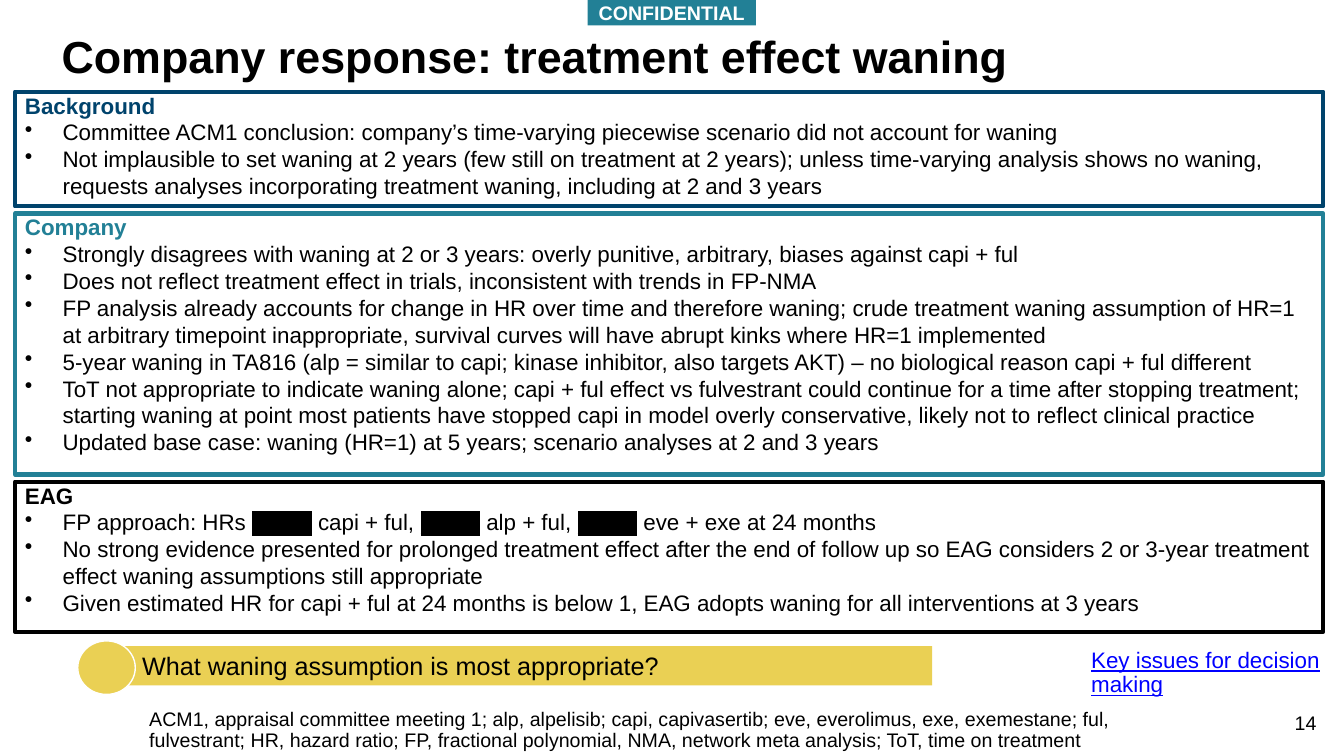
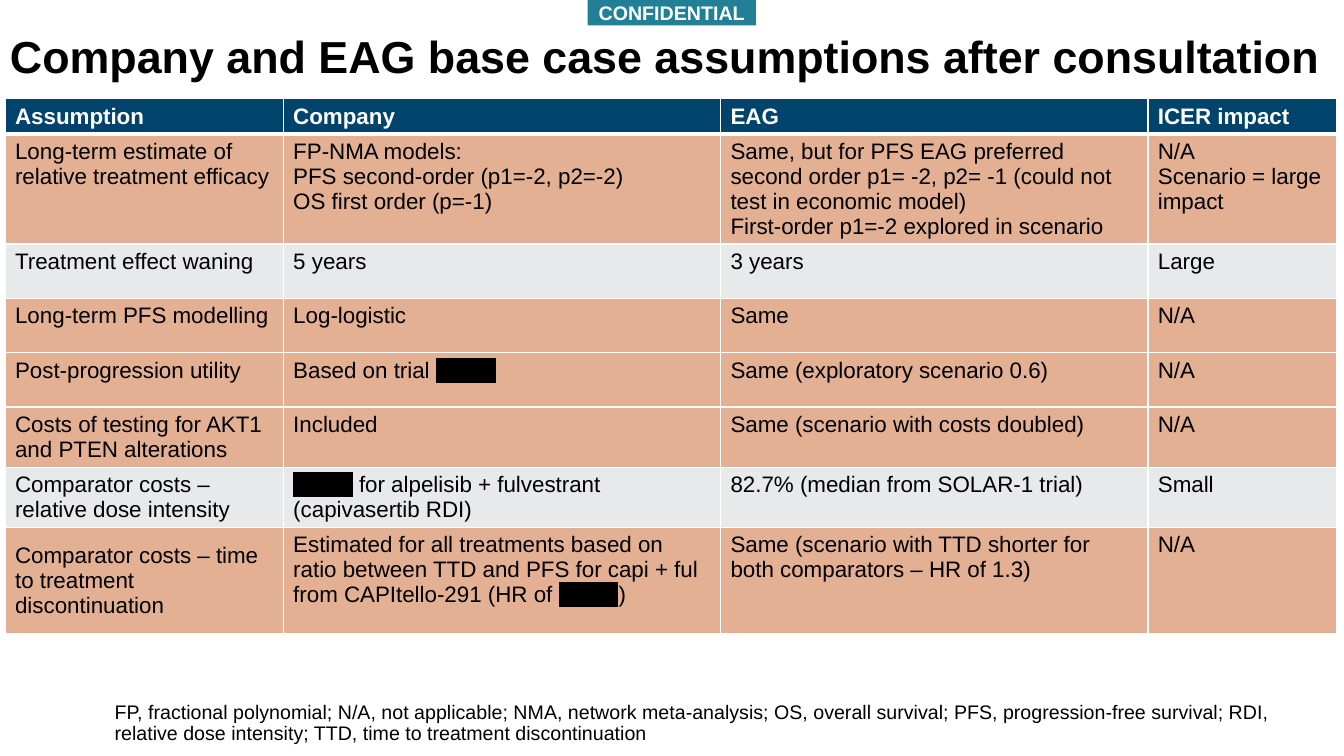
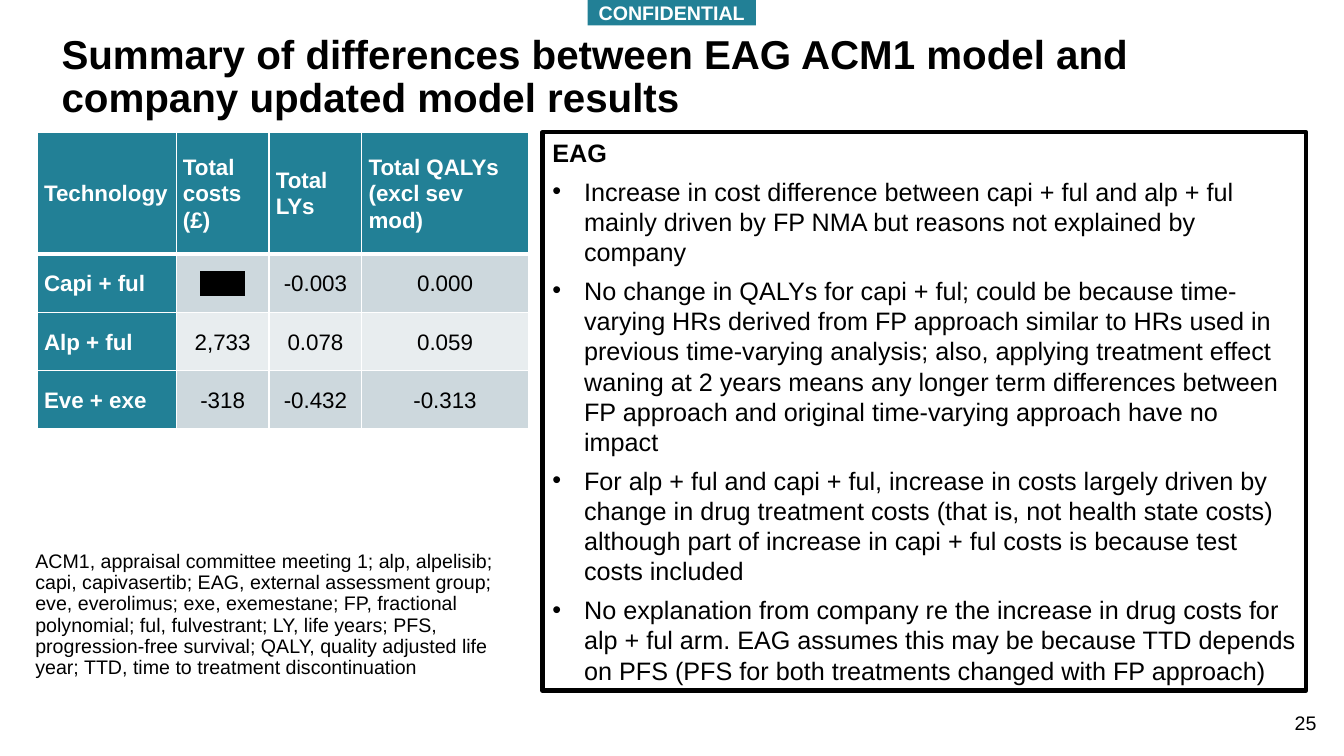
"""Build three committee slides on treatment effect waning and base cases."""
from lxml import etree
from pptx import Presentation
from pptx.dml.color import RGBColor
from pptx.enum import shapes, text
from pptx.oxml import ns
from pptx.util import Cm, Pt

NAVY, TEAL, GOLD, BLACK, WHITE = "00436C", "228096", "EAD054", "000000", "FFFFFF"
ORANGE, GREY, BAND_DARK, BAND_LIGHT = "E3B094", "E7E9EB", "CDD8DD", "E8EDEF"
LEFT, CENTER, RIGHT = text.PP_ALIGN.LEFT, text.PP_ALIGN.CENTER, text.PP_ALIGN.RIGHT
TOP, MIDDLE = text.MSO_ANCHOR.TOP, text.MSO_ANCHOR.MIDDLE
RECTANGLE, OVAL = shapes.MSO_SHAPE.RECTANGLE, shapes.MSO_SHAPE.OVAL
rgb = RGBColor.from_string


def place(shape, box, fill=None, line=None, weight=3, anchor=TOP, inset=0.25, pad=0.13):
    """Set the position, fill, outline and text margins of a shape."""
    shape.left, shape.top, shape.width, shape.height = map(Cm, box)
    shape.shadow.inherit = False
    if fill:
        shape.fill.solid()
        shape.fill.fore_color.rgb = rgb(fill)
    else:
        shape.fill.background()
    if line:
        shape.line.color.rgb = rgb(line)
        shape.line.width = Pt(weight)
    else:
        shape.line.fill.background()
    frame = shape.text_frame
    frame.word_wrap = True
    frame.auto_size = text.MSO_AUTO_SIZE.NONE
    frame.vertical_anchor = anchor
    frame.margin_left, frame.margin_right = Cm(inset), Cm(0.25)
    frame.margin_top = frame.margin_bottom = Cm(pad)
    return frame


def write(frame, lines, size=16, color=BLACK, bold=False, align=LEFT, spacing=1.0,
          gap=0, indent=0, heading=None, underline=None):
    """Write paragraphs; text between bars is blacked out, a heading has no bullet."""
    for index, line in enumerate(lines):
        para = frame.add_paragraph() if index else frame.paragraphs[0]
        is_heading = bool(heading) and index == 0
        hang = 0 if is_heading else indent
        para.alignment = align
        para.line_spacing = spacing
        para.space_before = Pt(gap if index else 0)
        props = para._p.get_or_add_pPr()
        props.set("marL", str(Cm(hang)))
        props.set("indent", str(-Cm(hang)))
        if hang:
            etree.SubElement(props, ns.qn("a:buChar")).set("char", "•")
        else:
            etree.SubElement(props, ns.qn("a:buNone"))
        para.font.name = "Arial"
        para.font.size = Pt(size)
        para.font.bold = bold or is_heading
        para.font.underline = underline
        para.font.color.rgb = rgb(heading if is_heading else color)
        for part, words in enumerate(line.split("|")):
            if not words:
                continue
            span = para.add_run()
            span.text = words
            if part % 2:
                span.font.underline = True
                mark = etree.SubElement(span._r.get_or_add_rPr(), ns.qn("a:highlight"))
                etree.SubElement(mark, ns.qn("a:srgbClr")).set("val", BLACK)


deck = Presentation()
deck.slide_width, deck.slide_height = Cm(33.87), Cm(19.05)

outlines = [
    (1, "Company response: treatment effect waning", 32, 1.3, 31.24, "14",
     (3.51, 17.75, 26.92, 1.3),
     "ACM1, appraisal committee meeting 1; alp, alpelisib; capi, capivasertib; eve, everolimus, "
     "exe, exemestane; ful, fulvestrant; HR, hazard ratio; FP, fractional polynomial, NMA, "
     "network meta analysis; ToT, time on treatment"),
    (1, "Company and EAG base case assumptions after consultation", 32, 0, 33.87, None,
     (2.64, 17.58, 30.96, 1.47),
     "FP, fractional polynomial; N/A, not applicable; NMA, network meta-analysis; OS, overall "
     "survival; PFS, progression-free survival; RDI, relative dose intensity; TTD, time to "
     "treatment discontinuation"),
    (3, "Summary of differences between EAG ACM1 model and company updated model results",
     28.8, 1.3, 31.24, "25", (0.64, 13.77, 12.37, 5),
     "ACM1, appraisal committee meeting 1; alp, alpelisib; capi, capivasertib; EAG, external "
     "assessment group; eve, everolimus; exe, exemestane; FP, fractional polynomial; ful, "
     "fulvestrant; LY, life years; PFS, progression-free survival; QALY, quality adjusted life "
     "year; TTD, time to treatment discontinuation"),
]
pages = []
for layout, title, size, left, width, number, note_box, note in outlines:
    page = deck.slides.add_slide(deck.slide_layouts[layout])
    pages.append(page)
    write(place(page.shapes.title, (left, 0.74, width, 1.65)), [title], size, bold=True,
          spacing=0.9)
    write(place(page.placeholders[1], note_box), [note], 14, spacing=0.9)
    banner = page.shapes.add_shape(RECTANGLE, 0, 0, 0, 0)
    write(place(banner, (14.81, 0, 4.24, 0.64), TEAL, anchor=MIDDLE, pad=0),
          ["CONFIDENTIAL"], 14, WHITE, True, CENTER)
    if number:
        corner = page.shapes.add_textbox(0, 0, 0, 0)
        write(place(corner, (32.13, 17.78, 1.3, 1.02)), [number], 14, align=RIGHT)
response, assumptions, differences = pages

panels = [
    (NAVY, 2.89, [
        "Background",
        "Committee ACM1 conclusion: company’s time-varying piecewise scenario did not account "
        "for waning",
        "Not implausible to set waning at 2 years (few still on treatment at 2 years); unless "
        "time-varying analysis shows no waning, requests analyses incorporating treatment "
        "waning, including at 2 and 3 years"]),
    (TEAL, 6.58, [
        "Company",
        "Strongly disagrees with waning at 2 or 3 years: overly punitive, arbitrary, biases "
        "against capi + ful",
        "Does not reflect treatment effect in trials, inconsistent with trends in FP-NMA",
        "FP analysis already accounts for change in HR over time and therefore waning; crude "
        "treatment waning assumption of HR=1 at arbitrary timepoint inappropriate, survival "
        "curves will have abrupt kinks where HR=1 implemented",
        "5-year waning in TA816 (alp = similar to capi; kinase inhibitor, also targets AKT) – "
        "no biological reason capi + ful different",
        "ToT not appropriate to indicate waning alone; capi + ful effect vs fulvestrant could "
        "continue for a time after stopping treatment; starting waning at point most patients "
        "have stopped capi in model overly conservative, likely not to reflect clinical practice",
        "Updated base case: waning (HR=1) at 5 years; scenario analyses at 2 and 3 years"]),
    (BLACK, 3.78, [
        "EAG",
        "FP approach: HRs |XXXX| capi + ful, |XXXX| alp + ful, |XXXX| eve + exe at 24 months",
        "No strong evidence presented for prolonged treatment effect after the end of follow up "
        "so EAG considers 2 or 3-year treatment effect waning assumptions still appropriate",
        "Given estimated HR for capi + ful at 24 months is below 1, EAG adopts waning for all "
        "interventions at 3 years"]),
]
top = 2.31
for color, height, lines in panels:
    panel = response.shapes.add_shape(RECTANGLE, 0, 0, 0, 0)
    write(place(panel, (0.38, top, 32.97, height), line=color, pad=0), lines, indent=0.95,
          heading=color)
    top += height + 0.18

question = response.shapes.add_shape(RECTANGLE, 0, 0, 0, 0)
write(place(question, (2.87, 16.28, 20.62, 0.99), GOLD, anchor=MIDDLE, inset=0.71),
      ["What waning assumption is most appropriate?"], 18)
place(response.shapes.add_shape(OVAL, 0, 0, 0, 0), (1.96, 16.15, 1.45, 1.35), GOLD, WHITE, 1)
key_issues = response.shapes.add_textbox(0, 0, 0, 0)
write(place(key_issues, (27.25, 16.23, 6.6, 1.57)), ["Key issues for decision making"],
      color="0000FF", spacing=0.9, underline=True)

write(place(differences.placeholders[2], (13.67, 3.33, 19.25, 14.07), line=BLACK), [
    "EAG",
    "Increase in cost difference between capi + ful and alp + ful mainly driven by FP NMA but "
    "reasons not explained by company",
    "No change in QALYs for capi + ful; could be because time-varying HRs derived from FP "
    "approach similar to HRs used in previous time-varying analysis; also, applying treatment "
    "effect waning at 2 years means any longer term differences between FP approach and "
    "original time-varying approach have no impact",
    "For alp + ful and capi + ful, increase in costs largely driven by change in drug treatment "
    "costs (that is, not health state costs) although part of increase in capi + ful costs is "
    "because test costs included",
    "No explanation from company re the increase in drug costs for alp + ful arm. EAG assumes "
    "this may be because TTD depends on PFS (PFS for both treatments changed with FP approach)",
], 18, gap=6, indent=0.8, heading=BLACK)

assumption_rows = [
    ["Assumption", "Company", "EAG", "ICER impact"],
    ["Long-term estimate of relative treatment efficacy",
     "FP-NMA models:\nPFS second-order (p1=-2, p2=-2)\nOS first order (p=-1)",
     "Same, but for PFS EAG preferred second order p1= -2, p2= -1 (could not test in economic "
     "model)\nFirst-order p1=-2 explored in scenario",
     "N/A\nScenario = large impact"],
    ["Treatment effect waning", "5 years", "3 years", "Large"],
    ["Long-term PFS modelling", "Log-logistic", "Same", "N/A"],
    ["Post-progression utility", "Based on trial |XXXX|", "Same (exploratory scenario 0.6)",
     "N/A"],
    ["Costs of testing for AKT1 and PTEN alterations", "Included",
     "Same (scenario with costs doubled)", "N/A"],
    ["Comparator costs – relative dose intensity",
     "|XXXX| for alpelisib + fulvestrant (capivasertib RDI)",
     "82.7% (median from SOLAR-1 trial)", "Small"],
    ["Comparator costs – time to treatment discontinuation",
     "Estimated for all treatments based on ratio between TTD and PFS for capi + ful from "
     "CAPItello-291 (HR of |XXXX|)",
     "Same (scenario with TTD shorter for both comparators – HR of 1.3)", "N/A"],
]
result_rows = [
    ["Technology", "Total costs (£)", "Total LYs", "Total QALYs (excl sev mod)"],
    ["Capi + ful", "|XXX|", "-0.003", "0.000"],
    ["Alp + ful", "2,733", "0.078", "0.059"],
    ["Eve + exe", "-318", "-0.432", "-0.313"],
]
tables = [
    (assumptions, 0.13, 2.49, [7.01, 11.02, 10.77, 4.75],
     [0.84, 1.9, 1.37, 1.37, 1.37, 1.45, 1.45, 2.69], assumption_rows,
     [NAVY, ORANGE, GREY, ORANGE, ORANGE, ORANGE, GREY, ORANGE], False),
    (differences, 0.94, 3.33, [3.5, 2.34, 2.34, 4.19], [3.07, 1.47, 1.47, 1.47], result_rows,
     [TEAL, BAND_DARK, BAND_LIGHT, BAND_DARK], True),
]
for page, left, top, widths, heights, rows, fills, is_result in tables:
    grid = page.shapes.add_table(len(rows), len(widths), Cm(left), Cm(top),
                                 Cm(sum(widths)), Cm(sum(heights))).table
    grid.horz_banding = False
    for column, width in zip(grid.columns, widths):
        column.width = Cm(width)
    for row, height in zip(grid.rows, heights):
        row.height = Cm(height)
    for r, entries in enumerate(rows):
        for c, entry in enumerate(entries):
            cell = grid.cell(r, c)
            is_head = r == 0 or (is_result and c == 0)
            is_middle = is_result or (c == 0 and r >= 5)
            cell.vertical_anchor = MIDDLE if is_middle else TOP
            cell.margin_left = cell.margin_right = Cm(0.17 if is_result else 0.25)
            cell.margin_top = cell.margin_bottom = Cm(0 if is_result else 0.13)
            props = cell._tc.get_or_add_tcPr()
            for side in "LRTB":
                thick = (r, side) in [(0, "B"), (1, "T")]
                edge = etree.SubElement(props, ns.qn("a:ln" + side))
                edge.set("w", str(Pt(3 if thick else 1)))
                paint = etree.SubElement(edge, ns.qn("a:solidFill"))
                etree.SubElement(paint, ns.qn("a:srgbClr")).set("val", WHITE)
            cell.fill.solid()
            cell.fill.fore_color.rgb = rgb(fills[0] if is_head else fills[r])
            write(cell.text_frame, entry.split("\n"), color=WHITE if is_head else BLACK,
                  bold=is_head, align=CENTER if is_result and not is_head else LEFT,
                  spacing=1.07 if is_result else 1.0)

deck.save("out.pptx")
